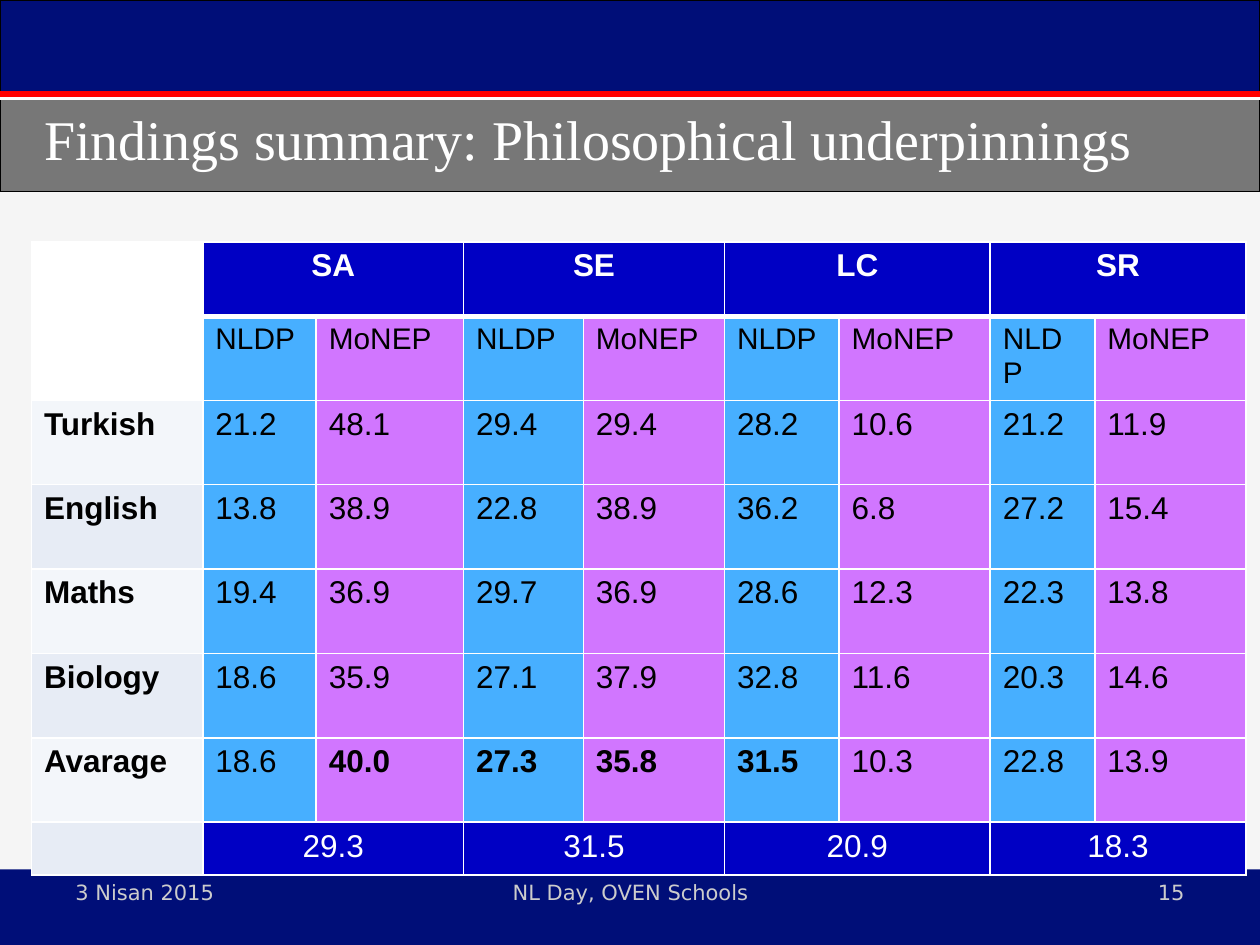
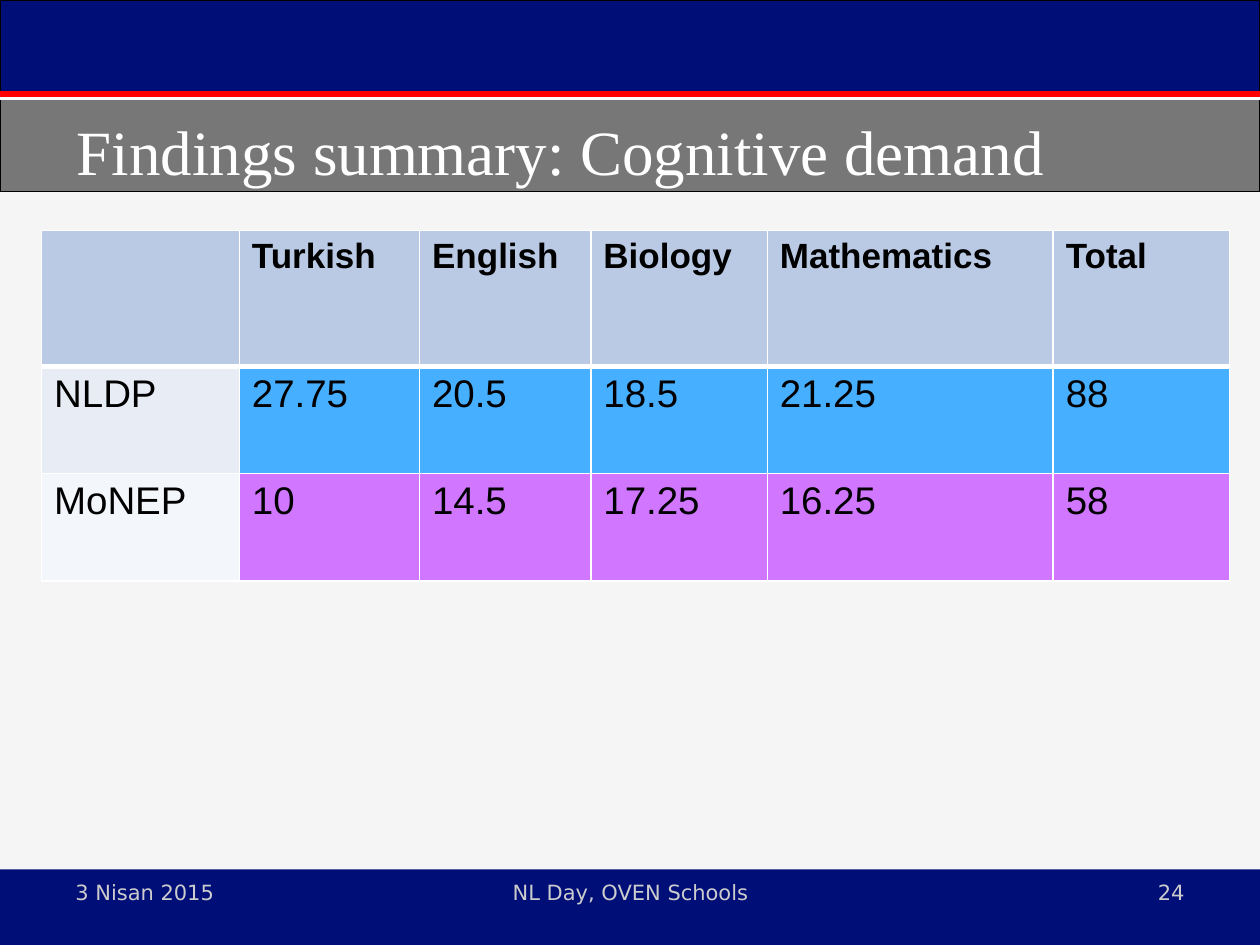
from lxml import etree
from pptx import Presentation
from pptx.dml.color import RGBColor
from pptx.enum import shapes, text
from pptx.oxml import ns
from pptx.util import Inches, Pt

WHITE = RGBColor(0xFF, 0xFF, 0xFF)
BLACK = RGBColor(0, 0, 0)
PAPER = RGBColor(0xF5, 0xF5, 0xF5)
NAVY = RGBColor(0x00, 0x0E, 0x78)
GRAY = RGBColor(0x77, 0x77, 0x77)
SILVER = RGBColor(0xCC, 0xCC, 0xCC)
RED = RGBColor(0xFF, 0, 0)
BLUE = RGBColor(0, 0, 0xC4)
SKY = RGBColor(0x47, 0xAF, 0xFF)
VIOLET = RGBColor(0xD1, 0x76, 0xFF)
MIST = RGBColor(0xBA, 0xCA, 0xE4)
PALE = RGBColor(0xF3, 0xF6, 0xFA)
HAZE = RGBColor(0xE7, 0xEC, 0xF5)

LEFT, MID, RIGHT = text.PP_ALIGN.LEFT, text.PP_ALIGN.CENTER, text.PP_ALIGN.RIGHT


def add_grid(slide, left, top, widths, heights, rows):
    """Add a table with white cell borders, heavier under the first row."""
    frame = slide.shapes.add_table(
        len(rows), len(widths), Inches(left), Inches(top),
        Inches(sum(widths)), Inches(sum(heights)))
    table = frame.table
    for col, width in zip(table.columns, widths):
        col.width = Inches(width)
    for r, row in enumerate(rows):
        table.rows[r].height = Inches(heights[r])
        for c, word in enumerate(row):
            cell = table.cell(r, c)
            cell.text = word
            props = cell._tc.get_or_add_tcPr()
            for side in "LRTB":
                heavy = (r, side) in ((0, "B"), (1, "T"))
                line = etree.SubElement(props, ns.qn(f"a:ln{side}"), w=str(Pt(3 if heavy else 1)))
                fill = etree.SubElement(line, ns.qn("a:solidFill"))
                etree.SubElement(fill, ns.qn("a:srgbClr"), val=str(WHITE))
    return table


def style(cell, fill, size, bold=False, color=BLACK, align=LEFT):
    cell.fill.solid()
    cell.fill.fore_color.rgb = fill
    para = cell.text_frame.paragraphs[0]
    para.alignment = align
    para.font.name = "Arial"
    para.font.size = Pt(size)
    para.font.bold = bold
    para.font.color.rgb = color


prs = Presentation()
prs.slide_width, prs.slide_height = Inches(10), Inches(7.5)
back = prs.slide_master.background.fill
back.solid()
back.fore_color.rgb = PAPER

# Bands, rules, title and footer of each slide
heads = [
    ("Findings summary: Philosophical underpinnings", 32, (0.25, 0.78, 9.75, 0.64), "15"),
    ("Findings summary: Cognitive demand", 36, (0.51, 0.84, 8.98, 0.71), "24"),
]
for name, size, place, number in heads:
    slide = prs.slides.add_slide(prs.slide_layouts[5])

    for top, height, color, edged in [(0.76, 0.76, GRAY, True), (6.9, 0.6, NAVY, False),
                                      (0, 0.76, NAVY, True)]:
        band = slide.shapes.add_shape(
            shapes.MSO_SHAPE.RECTANGLE, 0, Inches(top), prs.slide_width, Inches(height))
        band.shadow.inherit = False
        band.fill.solid()
        band.fill.fore_color.rgb = color
        if edged:
            band.line.color.rgb = BLACK
            band.line.width = Pt(0.75)
        else:
            band.line.fill.background()

    for y, color, width in [(0.75, RED, 4), (0.78, WHITE, 2)]:
        rule = slide.shapes.add_connector(
            shapes.MSO_CONNECTOR.STRAIGHT, 0, Inches(y), prs.slide_width, Inches(y))
        rule.line.color.rgb = color
        rule.line.width = Pt(width)
        etree.SubElement(rule._element.spPr, ns.qn("a:effectLst"))

    title = slide.shapes.title
    slide.shapes._spTree.append(title._element)  # in front of the bands
    title.left, title.top, title.width, title.height = map(Inches, place)
    title.text = name
    title.text_frame.auto_size = text.MSO_AUTO_SIZE.SHAPE_TO_FIT_TEXT
    title.text_frame.vertical_anchor = text.MSO_ANCHOR.MIDDLE
    para = title.text_frame.paragraphs[0]
    para.alignment = LEFT
    para.font.name = "Times New Roman"
    para.font.size = Pt(size)
    para.font.color.rgb = WHITE

    for left, width, align, word in [(0.5, 2.33, LEFT, "3 Nisan 2015"),
                                     (3.42, 3.17, MID, "NL Day, OVEN Schools"),
                                     (7.17, 2.33, RIGHT, number)]:
        foot = slide.shapes.add_textbox(Inches(left), Inches(6.93), Inches(width), Inches(0.52))
        foot.text_frame.word_wrap = True
        foot.text_frame.text = word
        para = foot.text_frame.paragraphs[0]
        para.alignment = align
        para.font.name = "DejaVu Sans"
        para.font.size = Pt(12)
        para.font.color.rgb = SILVER

# Philosophical underpinnings
rows = [
    ["", "SA", "", "SE", "", "LC", "", "SR", ""],
    [""] + ["NLDP", "MoNEP"] * 4,
    ["Turkish", "21.2", "48.1", "29.4", "29.4", "28.2", "10.6", "21.2", "11.9"],
    ["English", "13.8", "38.9", "22.8", "38.9", "36.2", "6.8", "27.2", "15.4"],
    ["Maths", "19.4", "36.9", "29.7", "36.9", "28.6", "12.3", "22.3", "13.8"],
    ["Biology", "18.6", "35.9", "27.1", "37.9", "32.8", "11.6", "20.3", "14.6"],
    ["Avarage", "18.6", "40.0", "27.3", "35.8", "31.5", "10.3", "22.8", "13.9"],
    ["", "29.3", "", "31.5", "", "20.9", "", "18.3", ""],
]
table = add_grid(prs.slides[0], 0.25, 1.92,
                 [1.36, 0.9, 1.17, 0.95, 1.12, 0.91, 1.2, 0.83, 1.2],
                 [0.59, 0.64] + [0.67] * 5 + [0.42], rows)
last = len(rows) - 1
for r, row in enumerate(rows):
    for c in range(len(row)):
        cell = table.cell(r, c)
        if c == 0:
            style(cell, WHITE if r < 2 else (PALE, HAZE)[r % 2], 18, bold=True)
        elif r in (0, last):
            style(cell, BLUE, 18, r == 0, WHITE, MID)
        else:
            strong = r == last - 1 and 2 <= c <= 5
            style(cell, SKY if c % 2 else VIOLET, 17 if r == 1 else 18, strong)
for r in (0, last):
    for c in range(1, 9, 2):
        table.cell(r, c).merge(table.cell(r, c + 1))

# Cognitive demand
rows = [
    ["", "Turkish", "English", "Biology", "Mathematics", "Total"],
    ["NLDP", "27.75", "20.5", "18.5", "21.25", "88"],
    ["MoNEP", "10", "14.5", "17.25", "16.25", "58"],
]
table = add_grid(prs.slides[1], 0.33, 1.83, [1.57, 1.43, 1.36, 1.4, 2.27, 1.4],
                 [1.08, 0.85, 0.85], rows)
tints = [(MIST, MIST), (HAZE, SKY), (PALE, VIOLET)]
for r, (first, rest) in enumerate(tints):
    for c in range(len(rows[r])):
        style(table.cell(r, c), rest if c else first, 22 if r else 20, r == 0)

prs.save("out.pptx")
